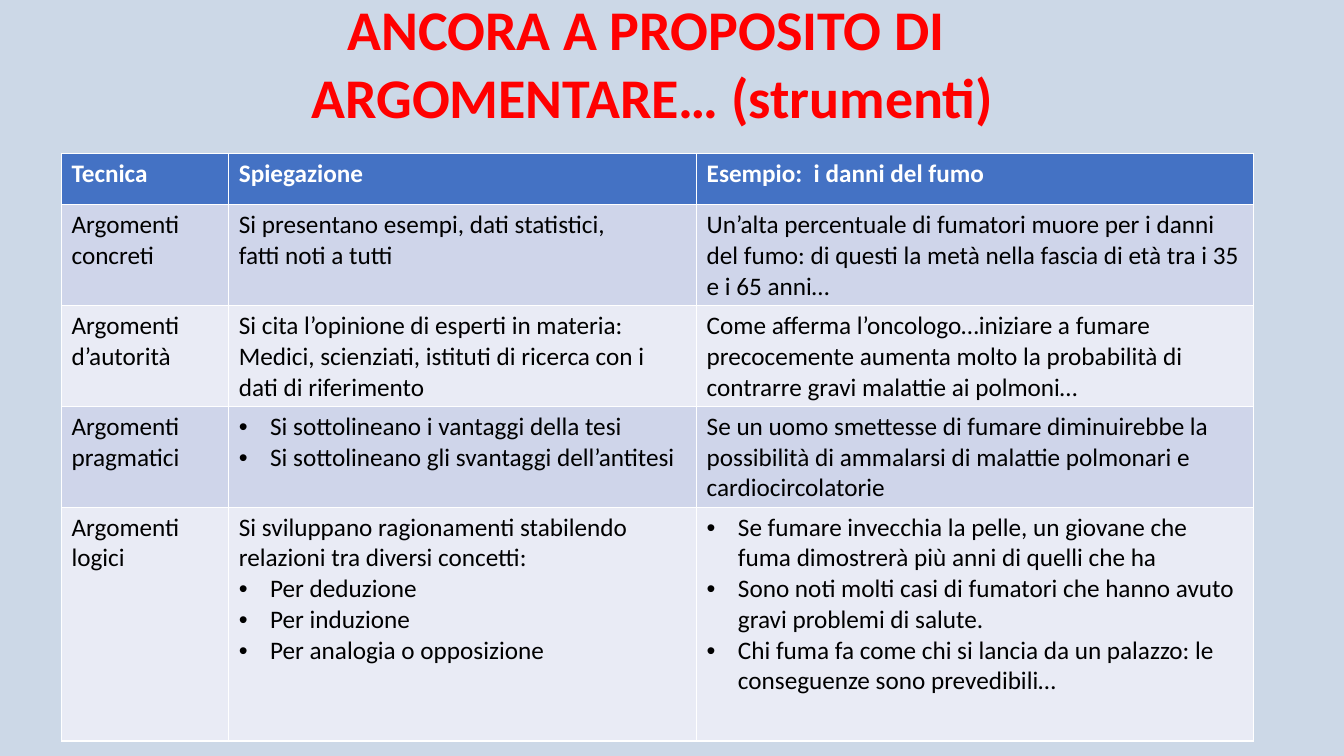
from lxml.etree import SubElement
from pptx import Presentation
from pptx.dml.color import RGBColor
from pptx.enum.text import MSO_ANCHOR, MSO_AUTO_SIZE, PP_ALIGN
from pptx.oxml import parse_xml
from pptx.oxml.ns import nsdecls, qn
from pptx.util import Inches, Pt

BACKGROUND = RGBColor(0xCC, 0xD8, 0xE7)
RED = RGBColor(0xFF, 0x00, 0x00)
WHITE = RGBColor(0xFF, 0xFF, 0xFF)
BLACK = RGBColor(0x00, 0x00, 0x00)
HEADER_FILL = RGBColor(0x44, 0x72, 0xC4)
BAND_FILLS = (RGBColor(0xE9, 0xEB, 0xF5), RGBColor(0xCF, 0xD5, 0xEA))

TITLE_LINES = ["ANCORA A PROPOSITO DI ", "ARGOMENTARE… (strumenti)"]

# Each cell is a list of paragraphs; a tuple inside it holds bulleted items.
TECHNIQUES = [
    [["Tecnica"], ["Spiegazione"], ["Esempio:  i danni del fumo"]],
    [["Argomenti", "concreti"],
     ["Si presentano esempi, dati statistici,", "fatti noti a tutti"],
     ["Un’alta percentuale di fumatori muore per i danni del fumo: "
      "di questi la metà nella fascia di età tra i 35 e i 65 anni…"]],
    [["Argomenti", "d’autorità"],
     ["Si cita l’opinione di esperti in materia:",
      "Medici, scienziati, istituti di ricerca con i dati di riferimento"],
     ["Come afferma l’oncologo…iniziare a fumare precocemente aumenta molto "
      "la probabilità di contrarre gravi malattie ai polmoni…"]],
    [["Argomenti", "pragmatici"],
     [("Si sottolineano i vantaggi della tesi",
       "Si sottolineano gli svantaggi dell’antitesi")],
     ["Se un uomo smettesse di fumare diminuirebbe la possibilità di "
      "ammalarsi di malattie polmonari e cardiocircolatorie"]],
    [["Argomenti", "logici"],
     ["Si sviluppano ragionamenti stabilendo relazioni tra diversi concetti:",
      ("Per deduzione", "Per induzione", "Per analogia o opposizione")],
     [("Se fumare invecchia la pelle, un giovane che fuma dimostrerà più anni "
       "di quelli che ha",
       "Sono noti molti casi di fumatori che hanno avuto gravi problemi di salute.",
       "Chi fuma fa come chi si lancia da un palazzo: le conseguenze sono "
       "prevedibili…")]],
]
COLUMN_WIDTHS = [1.66, 4.64, 5.52]
ROW_HEIGHTS = [0.51, 0.97, 0.97, 0.97, 2.32]


def add_run(paragraph, text, color, size, bold):
    run = paragraph.add_run()
    run.text = text
    for attribute, value in {"name": "Calibri", "size": Pt(size), "bold": bold}.items():
        setattr(run.font, attribute, value)
    run.font.color.rgb = color
    return run


def add_bullet(paragraph):
    properties = paragraph._p.get_or_add_pPr()
    properties.set("marL", str(Inches(0.31)))
    properties.set("indent", str(-Inches(0.31)))
    SubElement(properties, qn("a:buFont"), typeface="Arial")
    SubElement(properties, qn("a:buChar"), char="•")


def paragraphs_of(frame, count):
    return [frame.paragraphs[0]] + [frame.add_paragraph() for _ in range(count - 1)]


def fill_cell(cell, content, is_header):
    lines = []
    for part in content:
        if isinstance(part, tuple):
            lines += [(item, True) for item in part]
        else:
            lines.append((part, False))
    for paragraph, (text, bulleted) in zip(paragraphs_of(cell.text_frame, len(lines)), lines):
        if bulleted:
            add_bullet(paragraph)
        add_run(paragraph, text, WHITE if is_header else BLACK, 18, is_header)


def add_title(slide):
    title = slide.shapes.title
    position = {"left": 0, "top": -0.1, "width": 12.94, "height": 1.45}
    for attribute, value in position.items():
        setattr(title, attribute, Inches(value))
    frame = title.text_frame
    layout = {"word_wrap": True, "auto_size": MSO_AUTO_SIZE.SHAPE_TO_FIT_TEXT,
              "vertical_anchor": MSO_ANCHOR.TOP}
    for attribute, value in layout.items():
        setattr(frame, attribute, value)
    for paragraph, text in zip(paragraphs_of(frame, len(TITLE_LINES)), TITLE_LINES):
        paragraph.alignment = PP_ALIGN.CENTER
        run = add_run(paragraph, text, RED, 40, True)
        outline = parse_xml(
            f'<a:ln {nsdecls("a")} w="{Pt(1.06)}"><a:solidFill>'
            f'<a:srgbClr val="{WHITE}"/></a:solidFill></a:ln>')
        run.font._element.insert(0, outline)


def add_techniques(slide):
    table = slide.shapes.add_table(
        len(ROW_HEIGHTS), len(COLUMN_WIDTHS), Inches(0.61), Inches(1.52),
        Inches(sum(COLUMN_WIDTHS)), Inches(sum(ROW_HEIGHTS))).table
    for column, width in zip(table.columns, COLUMN_WIDTHS):
        column.width = Inches(width)
    for index, (row, height) in enumerate(zip(table.rows, ROW_HEIGHTS)):
        row.height = Inches(height)
        for cell, content in zip(row.cells, TECHNIQUES[index]):
            cell.fill.solid()
            cell.fill.fore_color.rgb = BAND_FILLS[index % 2] if index else HEADER_FILL
            fill_cell(cell, content, index == 0)


def main():
    presentation = Presentation()
    presentation.slide_width = Inches(13.33)
    presentation.slide_height = Inches(7.5)
    slide = presentation.slides.add_slide(presentation.slide_layouts[5])
    slide.background.fill.solid()
    slide.background.fill.fore_color.rgb = BACKGROUND
    add_title(slide)
    add_techniques(slide)
    presentation.save("out.pptx")


if __name__ == "__main__":
    main()
